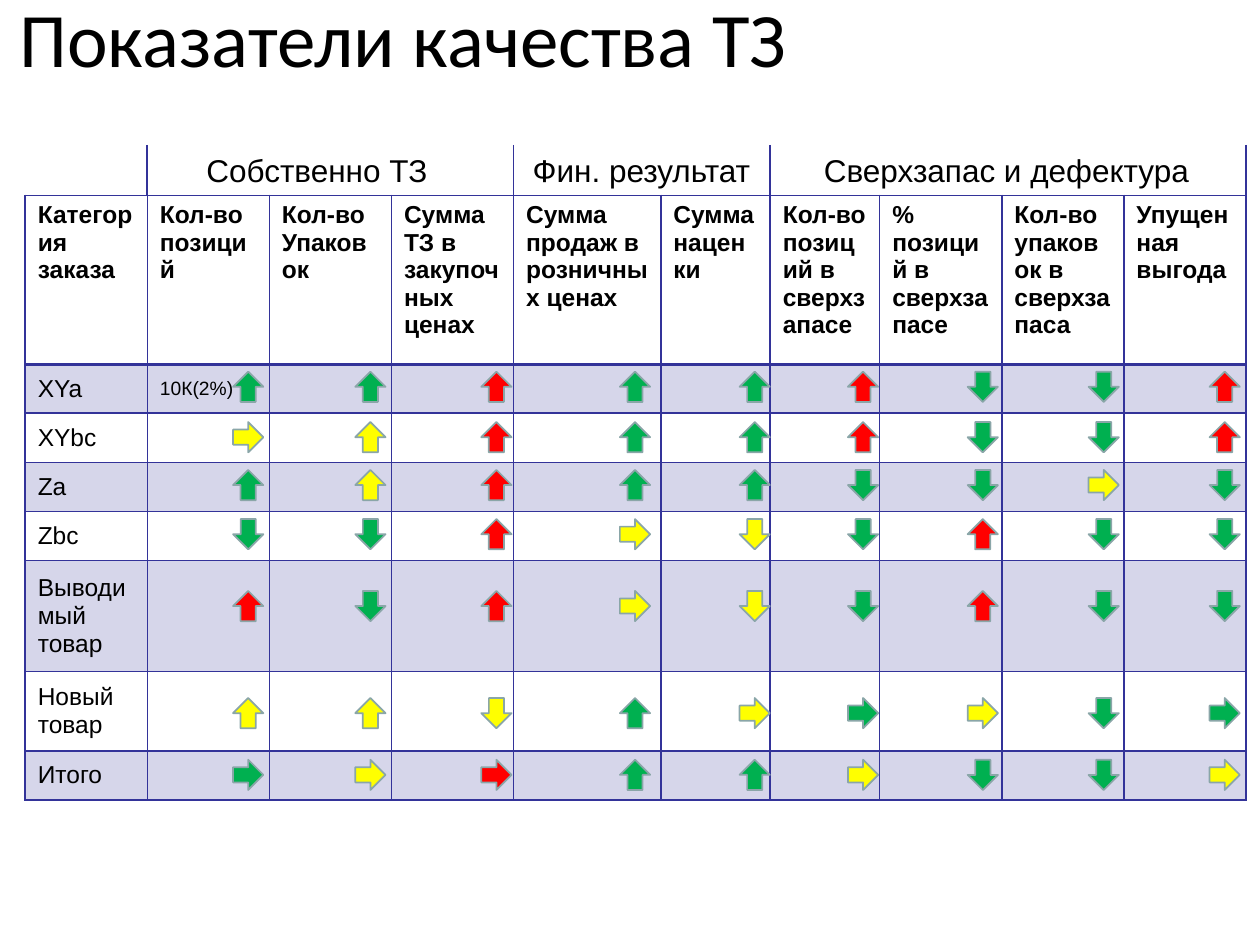
from itertools import accumulate
from typing import NamedTuple

from lxml import etree
from pptx import Presentation
from pptx.dml.color import RGBColor
from pptx.enum.shapes import MSO_CONNECTOR, MSO_SHAPE
from pptx.enum.text import MSO_ANCHOR, MSO_AUTO_SIZE, PP_ALIGN
from pptx.oxml.ns import qn
from pptx.util import Inches, Pt

STRAIGHT, UP_ARROW = MSO_CONNECTOR.STRAIGHT, MSO_SHAPE.UP_ARROW
MIDDLE, CENTER, GROW = MSO_ANCHOR.MIDDLE, PP_ALIGN.CENTER, MSO_AUTO_SIZE.SHAPE_TO_FIT_TEXT

BLACK, GRID, ARROW_LINE = "000000", "333399", "8AA6A8"
COLORS = {"G": "00B050", "R": "FF0000", "Y": "FFFF00"}
TURNS = {"↑": 0, "→": 90, "↓": 180}

LEFT, TOP, WIDTH = 0.2, 1.55, 9.69
COL_SHARES = [0.97] * 4 + [1.17, 0.87, 0.87] + [0.97] * 3
COLS = [WIDTH * share / sum(COL_SHARES) for share in COL_SHARES]
EDGES = list(accumulate(COLS, initial=LEFT))
HEADER_H = 1.34
GROUP_TOP = 1.15
ARROW = 0.24
ARROW_LEFTS = [1.85, 2.82, 3.82, 4.92, 5.87, 6.73, 7.68, 8.64, 9.6]

HEADERS = [
    "Категория заказа", "Кол-во позиций", "Кол-во Упаковок",
    "Сумма ТЗ в закупочных ценах", "Сумма продаж в розничных ценах",
    "Сумма наценки", "Кол-во позиций в сверхзапасе",
    "% позиций в сверхзапасе", "Кол-во упаковок в сверхзапаса",
    "Упущенная выгода",
]


class Category(NamedTuple):
    name: str
    height: float
    arrow_top: float
    trends: str
    note: str = ""


class Group(NamedTuple):
    name: str
    left: float
    width: float


CATEGORIES = [
    Category("XYa", 0.39, 2.95, "G↑ G↑ R↑ G↑ G↑ R↑ G↓ G↓ R↑", "10К(2%)"),
    Category("XYbc", 0.39, 3.35, "Y→ Y↑ R↑ G↑ G↑ R↑ G↓ G↓ R↑"),
    Category("Za", 0.39, 3.73, "G↑ Y↑ R↑ G↑ G↑ G↓ G↓ Y→ G↓"),
    Category("Zbc", 0.39, 4.12, "G↓ G↓ R↑ Y→ Y↓ G↓ R↑ G↓ G↓"),
    Category("Выводимый товар", 0.88, 4.69, "R↑ G↓ R↑ Y→ Y↓ G↓ R↑ G↓ G↓"),
    Category("Новый товар", 0.63, 5.54, "Y↑ Y↑ Y↓ G↑ Y→ G→ Y→ G↓ G→"),
    Category("Итого", 0.39, 6.03, "G→ Y→ R→ G↑ G↑ Y→ G↓ G↓ Y→"),
]
GROUPS = [
    Group("Собственно ТЗ", 1.54, 1.97),
    Group("Фин. результат", 4.13, 1.97),
    Group("Сверхзапас и дефектура", 6.44, 3.43),
]


def rgb(value: str) -> RGBColor:
    return RGBColor.from_string(value)


def write(tf, text: str, size: float, name: str = "Arial", bold: bool = False) -> None:
    r = tf.paragraphs[0].add_run()
    r.text = text
    for key, value in {"size": Pt(size), "name": name, "bold": bold}.items():
        setattr(r.font, key, value)
    r.font.color.rgb = rgb(BLACK)


def add_borders(cell, bottom: float) -> None:
    tcPr = cell._tc.get_or_add_tcPr()
    for side, width in {"lnL": 1, "lnR": 1, "lnT": 1, "lnB": bottom}.items():
        ln = etree.SubElement(tcPr, qn(f"a:{side}"), w=str(Pt(width)))
        fill = etree.SubElement(ln, qn("a:solidFill"))
        etree.SubElement(fill, qn("a:srgbClr"), val=GRID)


def format_cell(cell, text: str, size: float, header: bool, shaded: bool) -> None:
    add_borders(cell, 2 if header else 1)
    if shaded:
        cell.fill.solid()
        cell.fill.fore_color.rgb = rgb(GRID)
        clr = cell._tc.tcPr.find(qn("a:solidFill")).find(qn("a:srgbClr"))
        etree.SubElement(clr, qn("a:alpha"), val="20000")
    else:
        cell.fill.background()
    if not header:
        cell.vertical_anchor = MIDDLE
    if text:
        write(cell.text_frame, text, size, bold=header)
    else:
        # An empty cell at the default size would stretch its row.
        etree.SubElement(cell.text_frame.paragraphs[0]._p, qn("a:endParaRPr"), sz="1400")


def add_quality_table(slide) -> None:
    heights = [HEADER_H] + [c.height for c in CATEGORIES]
    table = slide.shapes.add_table(
        len(heights), len(COLS), Inches(LEFT), Inches(TOP),
        Inches(WIDTH), Inches(sum(heights))).table
    table.first_row = table.horz_banding = False
    for column, width in zip(table.columns, COLS):
        column.width = Inches(width)
    for row, height in zip(table.rows, heights):
        row.height = Inches(height)
    texts = [HEADERS] + [[c.name, c.note] + [""] * (len(COLS) - 2) for c in CATEGORIES]
    for i, row_texts in enumerate(texts):
        for j, text in enumerate(row_texts):
            size = 11 if i and j else 14
            format_cell(table.cell(i, j), text, size, header=i == 0, shaded=i % 2 == 1)


def add_group(slide, group: Group) -> None:
    sp = slide.shapes.add_textbox(
        Inches(group.left), Inches(GROUP_TOP), Inches(group.width), Inches(0.4))
    tf = sp.text_frame
    tf.word_wrap = True
    tf.auto_size = GROW
    write(tf, group.name, 18)


def add_trend(slide, left: float, top: float, trend: str) -> None:
    color, direction = trend
    sp = slide.shapes.add_shape(
        UP_ARROW, Inches(left), Inches(top), Inches(ARROW), Inches(ARROW))
    sp.rotation = TURNS[direction]
    sp.shadow.inherit = False
    sp.fill.solid()
    sp.fill.fore_color.rgb = rgb(COLORS[color])
    sp.line.color.rgb = rgb(ARROW_LINE)
    sp.line.width = Pt(1)


def add_divider(slide, x: float) -> None:
    line = slide.shapes.add_connector(
        STRAIGHT, Inches(x), Inches(GROUP_TOP), Inches(x), Inches(TOP))
    line.line.color.rgb = rgb(GRID)
    line.line.width = Pt(1)
    etree.SubElement(line._element.spPr, qn("a:effectLst"))


def main() -> None:
    prs = Presentation()
    prs.slide_width, prs.slide_height = Inches(10), Inches(7.5)
    slide = prs.slides.add_slide(prs.slide_layouts[5])

    title = slide.shapes.title
    frame = {"left": -1.3, "top": -0.33, "width": 9, "height": 1.25}
    for key, value in frame.items():
        setattr(title, key, Inches(value))
    title.text_frame.vertical_anchor = MIDDLE
    title.text_frame.paragraphs[0].alignment = CENTER
    write(title.text_frame, "Показатели качества ТЗ", 44, "Calibri")

    add_quality_table(slide)
    for group in GROUPS:
        add_group(slide, group)
    for category in CATEGORIES:
        for left, trend in zip(ARROW_LEFTS, category.trends.split()):
            add_trend(slide, left, category.arrow_top, trend)
    for column in (1, 4, 6, 10):
        add_divider(slide, EDGES[column])
    prs.save("out.pptx")


if __name__ == "__main__":
    main()
